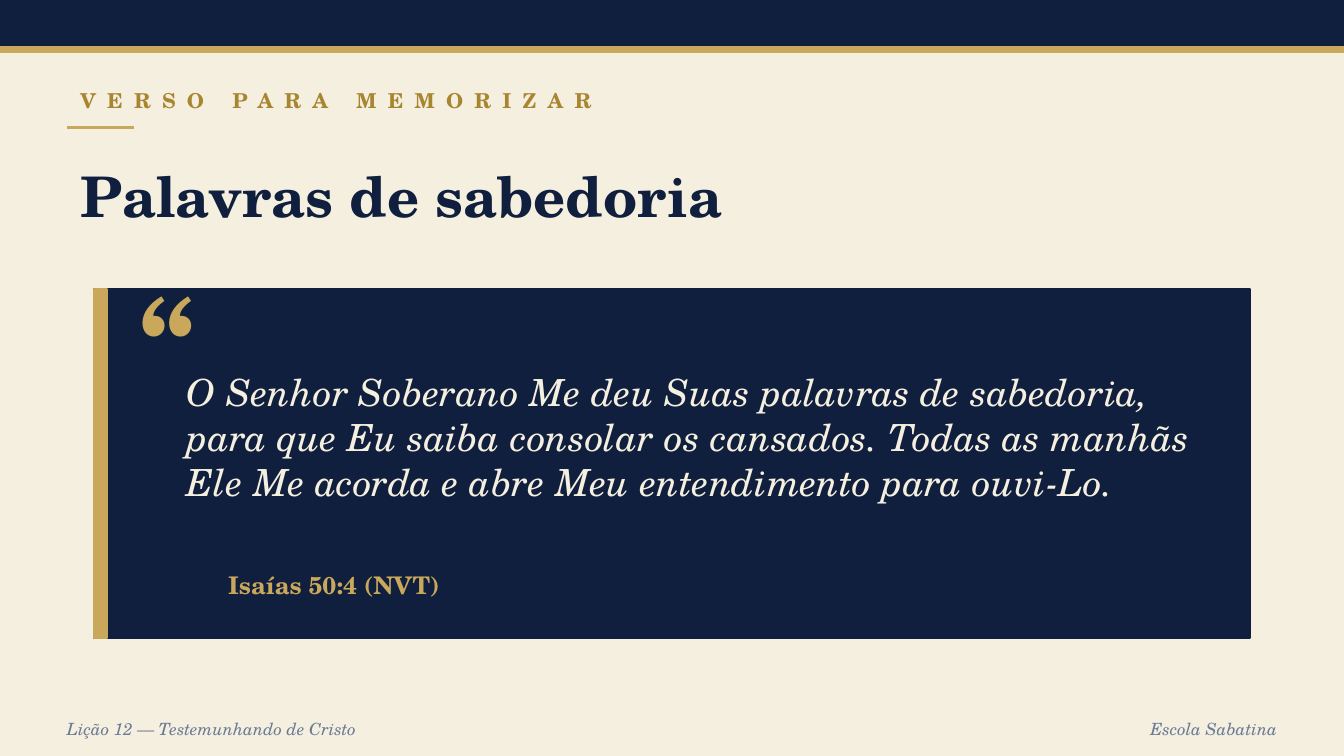
from dataclasses import dataclass

from lxml.etree import SubElement
from pptx import Presentation
from pptx.dml.color import RGBColor
from pptx.enum.shapes import MSO_CONNECTOR, MSO_SHAPE
from pptx.enum.text import MSO_ANCHOR, MSO_AUTO_SIZE, PP_ALIGN
from pptx.oxml.ns import qn
from pptx.util import Pt


@dataclass(frozen=True)
class Theme:
    font: str = "TeX Gyre Schola"
    cream: str = "F5EFE0"
    navy: str = "0F1F3D"
    gold: str = "C9A85C"
    dark_gold: str = "A8862F"
    slate: str = "6B7A95"
    footer: int = 9
    label: int = 11
    reference: int = 13
    quote: int = 20
    title: int = 30
    mark: int = 60


theme = Theme()
LEFT, RIGHT = PP_ALIGN.LEFT, PP_ALIGN.RIGHT

BARS = [
    ((0, 0, 720, 25.2), theme.navy),
    ((0, 25.2, 720, 2.88), theme.gold),
    ((50.4, 154.8, 619.2, 187.2), theme.navy),
    ((50.4, 154.8, 7.2, 187.2), theme.gold),
]

TITLE = ("Palavras de sabedoria", (36, 75.6, 648, 57.6), theme.title, theme.navy, "bold", LEFT)
LABEL = ("VERSO PARA MEMORIZAR", (36, 43.2, 648, 21.6), theme.label, theme.dark_gold, "bold", LEFT)
LABEL_SPACING = 6
RULE = (36, 68.4, 72, 68.4)

TEXTS = [
    ("Lição 12 — Testemunhando de Cristo", (28.8, 381.6, 432, 18),
     theme.footer, theme.slate, "italic", LEFT),
    ("Escola Sabatina", (547.2, 381.6, 144, 18),
     theme.footer, theme.slate, "italic", RIGHT),
    ("“", (68.4, 151.2, 57.6, 57.6), theme.mark, theme.gold, "bold", LEFT),
    ("O Senhor Soberano Me deu Suas palavras de sabedoria, para que Eu saiba consolar "
     "os cansados. Todas as manhãs Ele Me acorda e abre Meu entendimento para ouvi-Lo.",
     (92.88, 172.8, 555.12, 122.4), theme.quote, theme.cream, "italic", LEFT),
    ("Isaías 50:4 (NVT)", (115.2, 298.8, 532.8, 28.8),
     theme.reference, theme.gold, "bold", LEFT),
]


def color(value):
    return RGBColor.from_string(value)


def add_bar(page, place, fill):
    bar = page.shapes.add_shape(MSO_SHAPE.RECTANGLE, *map(Pt, place))
    bar.shadow.inherit = False
    bar.fill.solid()
    bar.fill.fore_color.rgb = color(fill)
    bar.line.color.rgb = color(fill)
    bar.line.width = Pt(1)


def write(box, text, size, ink, style, align):
    frame = box.text_frame
    frame.word_wrap = True
    frame.auto_size = MSO_AUTO_SIZE.NONE
    frame.vertical_anchor = MSO_ANCHOR.MIDDLE
    frame.text = text
    para = frame.paragraphs[0]
    para.alignment = align
    para.font.name = theme.font
    para.font.size = Pt(size)
    para.font.color.rgb = color(ink)
    para.font.bold = style == "bold"
    para.font.italic = style == "italic"
    return para


def add_text(page, text, place, *look):
    return write(page.shapes.add_textbox(*map(Pt, place)), text, *look)


def add_rule(page, ends):
    rule = page.shapes.add_connector(MSO_CONNECTOR.STRAIGHT, *map(Pt, ends))
    rule.line.color.rgb = color(theme.gold)
    rule.line.width = Pt(1.5)
    SubElement(rule.element.spPr, qn("a:effectLst"))


def set_title(page, text, place, *look):
    box = page.shapes.title
    box.left, box.top, box.width, box.height = map(Pt, place)
    write(box, text, *look)


def main():
    deck = Presentation()
    deck.slide_width, deck.slide_height = Pt(720), Pt(405)
    page = deck.slides.add_slide(deck.slide_layouts.get_by_name("Title Only"))
    page.background.fill.solid()
    page.background.fill.fore_color.rgb = color(theme.cream)

    for bar in BARS:
        add_bar(page, *bar)
    set_title(page, *TITLE)
    label = add_text(page, *LABEL)
    label.runs[0].font._element.set("spc", str(LABEL_SPACING * 100))
    add_rule(page, RULE)
    for text in TEXTS:
        add_text(page, *text)

    deck.save("out.pptx")


if __name__ == "__main__":
    main()
